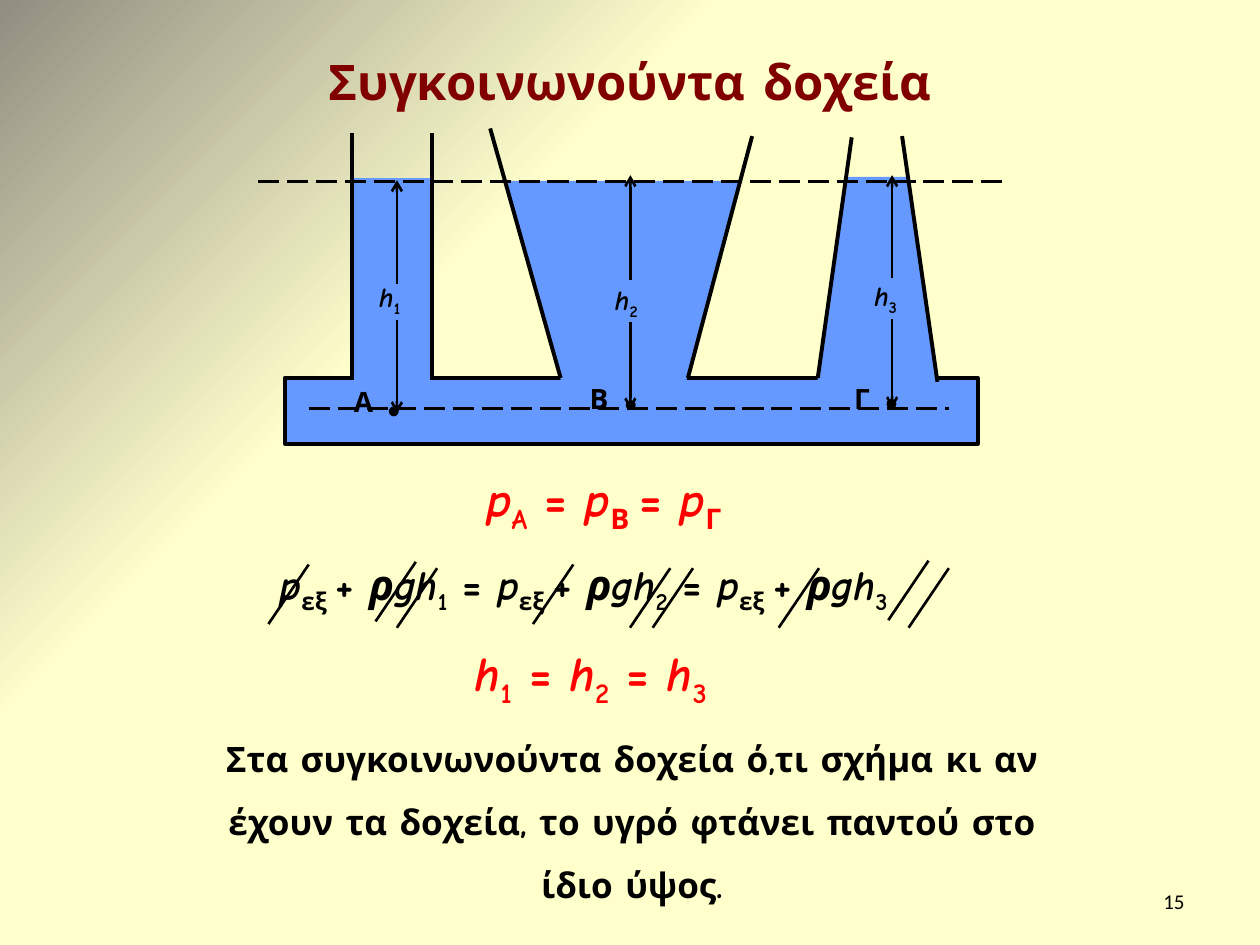
"""Build the slide on communicating vessels."""
from lxml.etree import SubElement
from pptx import Presentation
from pptx.dml.color import RGBColor
from pptx.enum.dml import MSO_LINE
from pptx.enum.shapes import MSO_CONNECTOR, MSO_SHAPE
from pptx.enum.text import MSO_ANCHOR, MSO_AUTO_SIZE, PP_ALIGN
from pptx.oxml.ns import qn
from pptx.util import Pt

COLORS = {"cream": "FFFFCC", "taupe": "918E81", "water": "6699FF",
          "black": "000000", "red": "FF0000", "maroon": "800000"}
RGB = {name: RGBColor.from_string(value) for name, value in COLORS.items()}
FONT = "Comic Neue"

presentation = Presentation()
presentation.slide_width, presentation.slide_height = Pt(720), Pt(540)
slide = presentation.slides.add_slide(presentation.slide_layouts[5])
shapes = slide.shapes


def add_text(box, markup, size, color="black", font=FONT, bold=True, align=PP_ALIGN.LEFT):
    """Fill a box from parts split by |, where / marks italic and _ subscript."""
    shape = shapes.add_textbox(*map(Pt, box)) if isinstance(box, tuple) else box
    frame = shape.text_frame
    frame.word_wrap = True
    frame.auto_size = MSO_AUTO_SIZE.NONE
    frame.vertical_anchor = MSO_ANCHOR.TOP
    paragraph = frame.paragraphs[0]
    paragraph.alignment = align
    for part in markup.split("|"):
        run = paragraph.add_run()
        run.text = part.lstrip("/_")
        run.font.name, run.font.size, run.font.bold = font, Pt(size), bold
        run.font.italic = part.startswith("/")
        run.font.color.rgb = RGB[color]
        if part.startswith("_"):
            run.font._element.set("baseline", "-25000")
    return shape


def add_line(start, end, width=1.5, dashed=False, arrow=False):
    """Draw a black line, dashed or with an arrowhead at its end."""
    line = shapes.add_connector(MSO_CONNECTOR.STRAIGHT, *map(Pt, (*start, *end)))
    line.line.color.rgb = RGB["black"]
    line.line.width = Pt(width)
    if dashed:
        line.line.dash_style = MSO_LINE.LONG_DASH
    if arrow:
        SubElement(line.line._get_or_add_ln(), qn("a:tailEnd"), type="arrow")
    SubElement(line._element.spPr, qn("a:effectLst"))


background = slide.background.fill
background.gradient()
for stop, (position, color) in zip(background.gradient_stops, [(0.67, "cream"), (1, "taupe")]):
    stop.position = position
    stop.color.rgb = RGB[color]
gradient = slide._element.find(".//" + qn("a:gradFill"))
gradient.remove(gradient.find(qn("a:lin")))
gradient_path = SubElement(gradient, qn("a:path"), path="circle")
SubElement(gradient_path, qn("a:fillToRect"), l="100000", t="100000")

title = shapes.title
title.left, title.top, title.width, title.height = map(Pt, (172.8, 26, 374.4, 41))
add_text(title, "Συγκοινωνούντα δοχεία", 28, "maroon", align=PP_ALIGN.CENTER)

basin = shapes.add_shape(MSO_SHAPE.RECTANGLE, Pt(162.7), Pt(216), Pt(396), Pt(37.5))
liquids = [basin]
for outline in [
    [(289.5, 103.7), (323.3, 226), (389.5, 226), (423.4, 103.7)],
    [(536.4, 224), (518.4, 101.5), (483.8, 101.5), (466.6, 224)],
]:
    points = [(Pt(x), Pt(y)) for x, y in outline]
    builder = shapes.build_freeform(*points[0])
    builder.add_line_segments(points[1:], close=True)
    liquids.append(builder.convert_to_shape())
liquids.append(shapes.add_shape(MSO_SHAPE.RECTANGLE, Pt(202.3), Pt(102.2), Pt(43.9), Pt(136)))
for liquid in liquids:
    liquid.shadow.inherit = False
    liquid.fill.solid()
    liquid.fill.fore_color.rgb = RGB["water"]
    liquid.line.color.rgb = RGB["water"]
    liquid.line.width = Pt(0.75)
basin.line.color.rgb = RGB["black"]
basin.line.width = Pt(2.25)

for foot, rim in [
    ((200.9, 217.4), (200.9, 76.3)), ((247, 217.4), (247, 76.3)),
    ((320.4, 216), (280.1, 73.4)), ((393.1, 216), (429.8, 77.8)),
    ((467.3, 216), (486.7, 78.5)), ((535.7, 218.2), (515.5, 77.8)),
]:
    add_line(foot, rim, width=2.25)

for left, top in [(507.6, 229), (358.6, 229.7), (223.2, 233.3)]:
    dot = shapes.add_shape(MSO_SHAPE.OVAL, Pt(left), Pt(top), Pt(3.6), Pt(3.6))
    dot.shadow.inherit = False
    dot.fill.solid()
    dot.fill.fore_color.rgb = RGB["black"]
    dot.line.color.rgb = RGB["black"]
    dot.line.width = Pt(2)

add_line((176.4, 233.3), (542.2, 233.3), dashed=True)
for letter, left, top in [("Α", 195.1, 216), ("Β", 329.8, 214.6), ("Γ", 481, 214.6)]:
    add_text((left, top, 28, 26.6), letter, 16)
add_line((147.6, 103.7), (573.1, 103.7), dashed=True)

for number, x, surface, upper, lower, bottom, label_left, label_top in [
    (1, 226.8, 103, 162, 182.9, 236.2, 209.5, 156.2),
    (2, 360.2, 100.1, 159.8, 184.3, 234, 344.2, 157.7),
    (3, 509.8, 100.1, 159.1, 182.2, 233.3, 492.5, 155.5),
]:
    add_line((x, upper), (x, surface), arrow=True)
    add_line((x, lower), (x, bottom), arrow=True)
    add_text((label_left, label_top, 33.8, 26.6), f"/h|_{number}", 16)

add_text((270.7, 264.2, 184.3, 41), "/p|_A| = |/p|_Β |= |/p|_Γ", 28, "red")
pressures = "| = |".join(f"/p|_εξ |+ |/ρgh|_{number}" for number in (1, 2, 3))
add_text((152.6, 315.4, 428.4, 36), pressures, 24)
for x, y in [
    (327.6, 322.6), (396, 324.7), (176.4, 322.6), (468, 324.7), (530.6, 320.4),
    (542.2, 324.7), (237.6, 321.1), (249.8, 324.7), (383, 324.7),
]:
    add_line((x, y), (x - 23, y + 34))
heights = "| = |".join(f"/h|_{number}" for number in (1, 2, 3))
add_text((264.2, 363.6, 187.2, 41), heights, 28, "red")

conclusion = add_text(
    (111.6, 406, 499, 75.6),
    "Στα συγκοινωνούντα δοχεία ό,τι σχήμα κι αν έχουν τα δοχεία, "
    "το υγρό φτάνει παντού στο ίδιο ύψος.", 20, align=PP_ALIGN.CENTER)
conclusion.text_frame.paragraphs[0].line_spacing = 1.5

page_number = add_text((516, 500.5, 168, 28.8), "15", 12, font="Calibri", bold=False,
                       align=PP_ALIGN.RIGHT)
page_number.text_frame.vertical_anchor = MSO_ANCHOR.MIDDLE

presentation.save("out.pptx")
